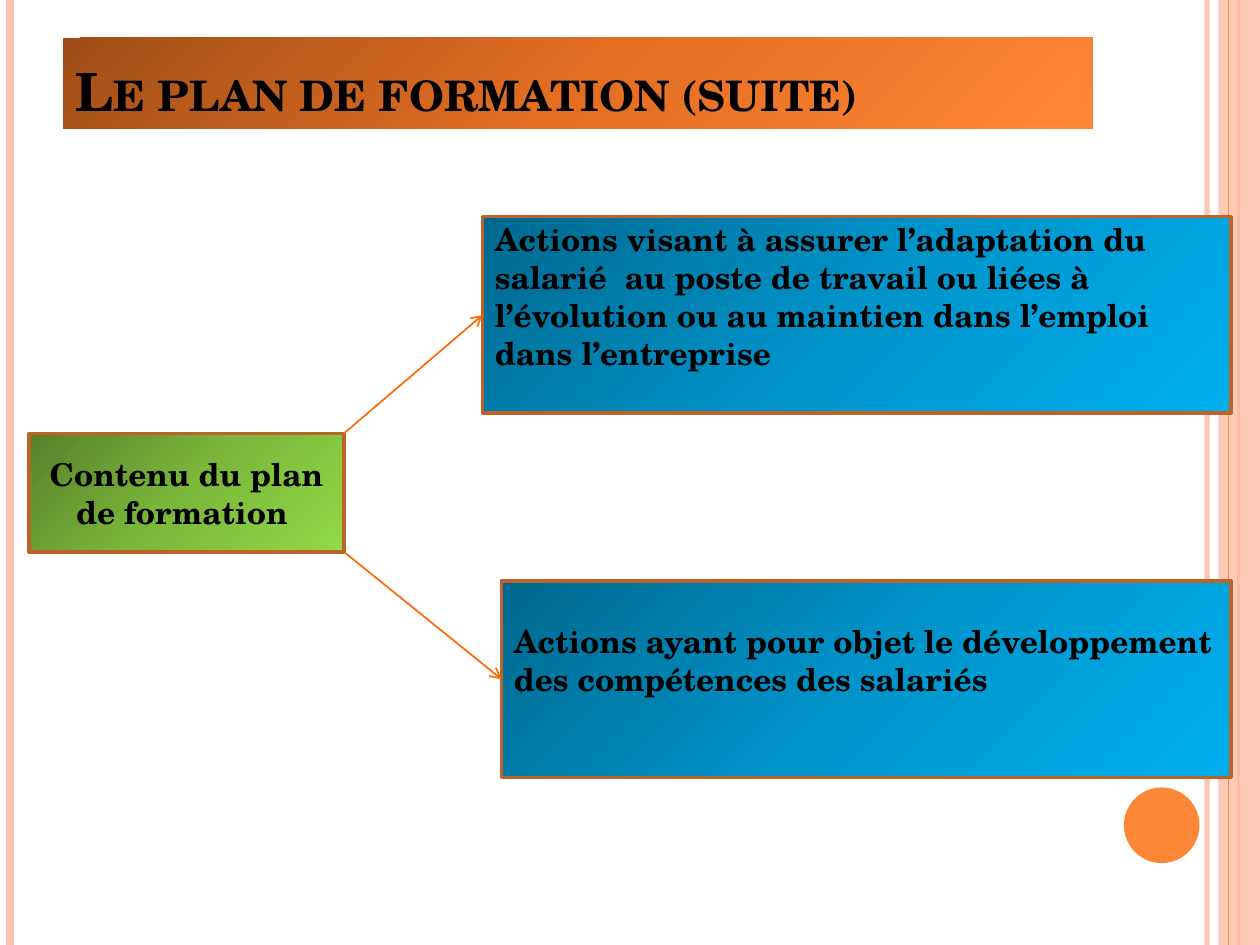
from dataclasses import dataclass
from typing import Any, Optional

import lxml.etree
import pptx
import pptx.dml.color
import pptx.enum.shapes
import pptx.enum.text
import pptx.oxml.ns
import pptx.util

Kind = pptx.enum.shapes.MSO_SHAPE
Align = pptx.enum.text.PP_ALIGN
Anchor = pptx.enum.text.MSO_ANCHOR
qn = pptx.oxml.ns.qn

WIDE, HIGH = pptx.util.Inches(10), pptx.util.Inches(7.5)
COLS, ROWS = 100, 75


@dataclass(frozen=True)
class Theme:
    face: str = "TeX Gyre Schola"
    ink: str = "000000"
    pale: str = "FEC3AE"
    warm: str = "FE8637"
    arrow: str = "FF6B0A"
    edge: str = "BC6329"
    rust: tuple = ("9F4E18", "E36E22", "FF8636")
    green: tuple = ("57812A", "7BB73B", "92DA46")
    blue: tuple = ("00688E", "0094CA", "00B0F0")
    head: int = 30
    body: int = 18


LOOK = Theme()


@dataclass(frozen=True)
class Area:
    col: float
    row: float
    cols: float
    rows: float

    @property
    def right(self) -> float:
        return self.col + self.cols

    @property
    def base(self) -> float:
        return self.row + self.rows


@dataclass(frozen=True)
class Rule:
    col: float
    color: str
    width: float
    alpha: int = 100


@dataclass(frozen=True)
class Box:
    area: Area
    stops: tuple
    lines: tuple
    align: Any = Align.LEFT
    foot: float = 0.05


RULES = (
    Rule(95.8, LOOK.pale, 3, 93),
    Rule(0.8, LOOK.pale, 4.5),
    Rule(98.3, LOOK.warm, 1.5),
)
THIN = Rule(97.5, LOOK.warm, 0.75)
BAND = Area(96.7, 0, 3.3, ROWS)
DISC = Area(89.2, 62.5, 6, 6)
TITLE = Area(5, 3, 81.7, 7.2)

PLAN = Box(Area(2.3, 34.4, 25, 9.4), LOOK.green,
           ("Contenu du plan de formation ",), Align.CENTER)
ADAPT = Box(Area(38.3, 17.2, 59.4, 15.6), LOOK.blue,
            ("Actions visant à assurer l’adaptation du salarié  au poste de "
             "travail ou liées à l’évolution ou au maintien dans l’emploi "
             "dans l’entreprise",), foot=0.35)
SKILLS = Box(Area(39.8, 46.1, 57.9, 15.6), LOOK.blue,
             ("Actions ayant pour objet le développement",
              "des compétences des salariés"), foot=0.35)


def across(col: float) -> int:
    return round(WIDE * col / COLS)


def down(row: float) -> int:
    return round(HIGH * row / ROWS)


def apply(item: Any, form: dict) -> None:
    for name, value in form.items():
        setattr(item, name, value)


def tint(hue: str) -> Any:
    return pptx.dml.color.RGBColor.from_string(hue)


def place(area: Area) -> dict:
    return {"left": across(area.col), "top": down(area.row),
            "width": across(area.cols), "height": down(area.rows)}


def fade(shape: Any, alpha: int) -> None:
    color = next(shape._element.spPr.iter(qn("a:srgbClr")))
    lxml.etree.SubElement(color, qn("a:alpha")).set("val", str(alpha * 1000))


def blend(shape: Any, hues: tuple) -> None:
    shape.fill.gradient()
    grad = shape._element.spPr.find(qn("a:gradFill"))
    for child in list(grad):
        grad.remove(child)
    stops = lxml.etree.SubElement(grad, qn("a:gsLst"))
    for step, hue in enumerate(hues):
        stop = lxml.etree.SubElement(stops, qn("a:gs"))
        stop.set("pos", str(step * 100000 // (len(hues) - 1)))
        lxml.etree.SubElement(stop, qn("a:srgbClr")).set("val", hue)
    slant = lxml.etree.SubElement(grad, qn("a:lin"))
    apply_xml(slant, {"ang": str(45 * 60000), "scaled": "0"})


def apply_xml(node: Any, form: dict) -> None:
    for name, value in form.items():
        node.set(name, value)


def write(shape: Any, lines: tuple, size: int, align: Any, form: dict) -> None:
    frame = shape.text_frame
    frame.text = "\n".join(lines)
    apply(frame, {"word_wrap": True,
                  "auto_size": pptx.enum.text.MSO_AUTO_SIZE.NONE, **form})
    for para in frame.paragraphs:
        para.alignment = align
        for run in para.runs:
            apply(run.font, {"name": LOOK.face, "bold": True,
                             "size": pptx.util.Pt(size)})
            run.font.color.rgb = tint(LOOK.ink)


def draw_line(slide: Any, start: tuple, end: tuple, color: str,
              width: float) -> Any:
    line = slide.shapes.add_connector(
        pptx.enum.shapes.MSO_CONNECTOR.STRAIGHT,
        across(start[0]), down(start[1]), across(end[0]), down(end[1]))
    line.line.color.rgb = tint(color)
    line.line.width = pptx.util.Pt(width)
    lxml.etree.SubElement(line._element.spPr, qn("a:effectLst"))
    return line


def draw_rule(slide: Any, rule: Rule) -> None:
    line = draw_line(slide, (rule.col, 0), (rule.col, ROWS),
                     rule.color, rule.width)
    if rule.alpha < 100:
        fade(line, rule.alpha)


def draw_plain(slide: Any, kind: Any, area: Area, color: Optional[str]) -> Any:
    shape = slide.shapes.add_shape(kind, *place(area).values())
    shape.shadow.inherit = False
    if color:
        shape.fill.solid()
        shape.fill.fore_color.rgb = tint(color)
        shape.line.fill.background()
    return shape


def draw_box(slide: Any, box: Box) -> Any:
    shape = draw_plain(slide, Kind.RECTANGLE, box.area, None)
    blend(shape, box.stops)
    shape.line.color.rgb = tint(LOOK.edge)
    shape.line.width = pptx.util.Pt(2)
    write(shape, box.lines, LOOK.body, box.align,
          {"vertical_anchor": Anchor.MIDDLE,
           "margin_bottom": pptx.util.Inches(box.foot)})
    return shape


def draw_arrow(slide: Any, row: float, box: Box, goal: Any) -> None:
    middle = (box.area.row + box.area.base) / 2
    line = draw_line(slide, (PLAN.area.right, row), (box.area.col, middle),
                     LOOK.arrow, 1)
    line.end_connect(goal, 1)
    tip = lxml.etree.SubElement(line.line._get_or_add_ln(), qn("a:tailEnd"))
    tip.set("type", "arrow")


def draw_title(slide: Any) -> None:
    title = slide.shapes.title
    apply(title, place(TITLE))
    blend(title, LOOK.rust)
    write(title, ("Le plan de formation (suite)",), LOOK.head, Align.LEFT,
          {"vertical_anchor": Anchor.BOTTOM})
    for run in title.text_frame.paragraphs[0].runs:
        run.font._element.set("cap", "small")


def main() -> None:
    deck = pptx.Presentation()
    apply(deck, {"slide_width": WIDE, "slide_height": HIGH})
    slide = deck.slides.add_slide(deck.slide_layouts[5])
    for rule in RULES:
        draw_rule(slide, rule)
    fade(draw_plain(slide, Kind.RECTANGLE, BAND, LOOK.pale), 87)
    draw_rule(slide, THIN)
    draw_plain(slide, Kind.OVAL, DISC, LOOK.warm)
    draw_title(slide)
    draw_box(slide, PLAN)
    goals = [(box, draw_box(slide, box)) for box in (ADAPT, SKILLS)]
    for row, (box, goal) in zip((PLAN.area.row, PLAN.area.base), goals):
        draw_arrow(slide, row, box, goal)
    deck.save("out.pptx")


if __name__ == "__main__":
    main()
